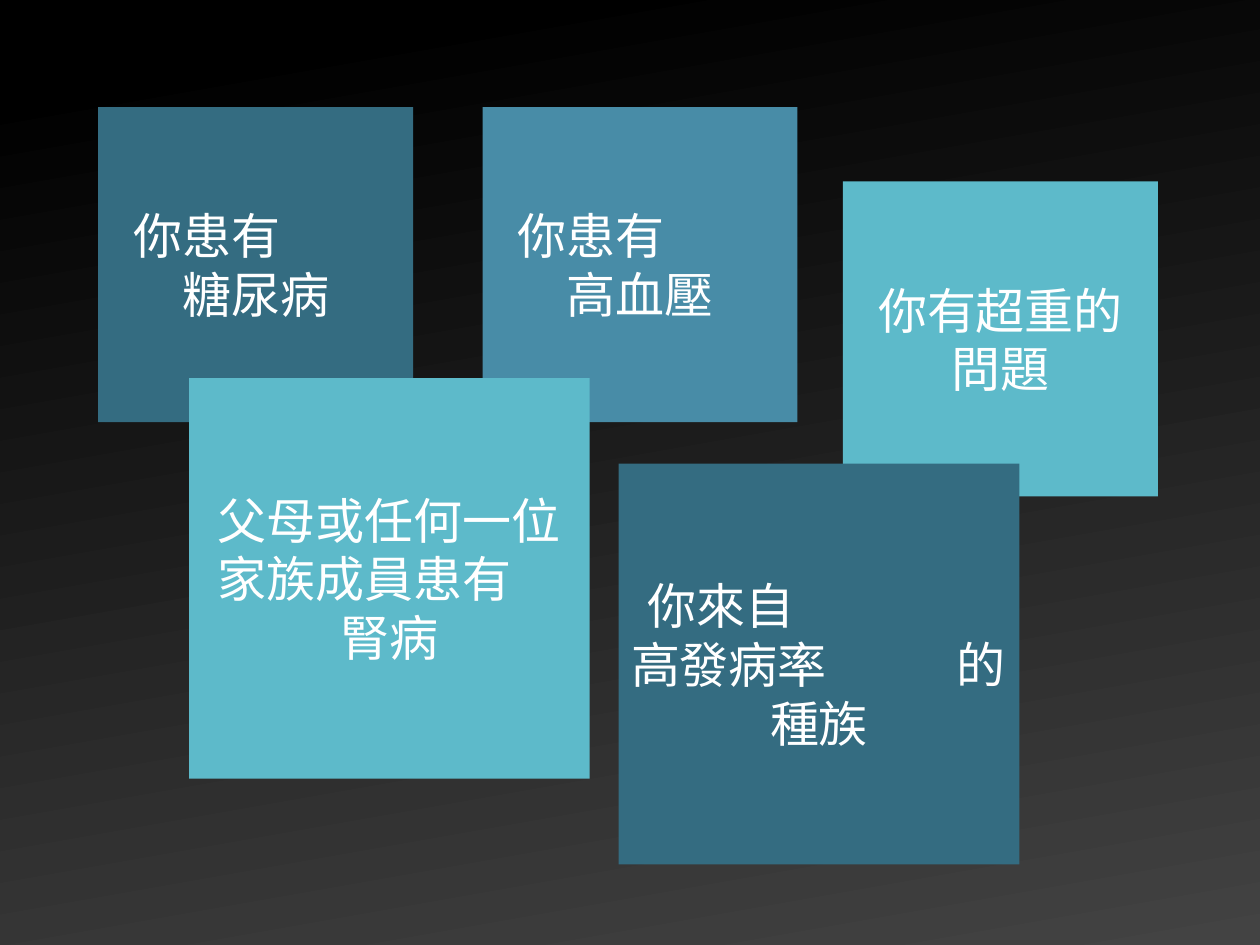
import lxml.etree
import pptx
import pptx.dml.color
import pptx.enum.shapes
import pptx.enum.text
import pptx.oxml.ns
import pptx.util

Inches = pptx.util.Inches
ALIGN = pptx.enum.text.PP_ALIGN

COLORS = {
    "top": "000000",
    "bottom": "434343",
    "dark": "346C81",
    "mid": "488CA7",
    "light": "5DBACA",
    "text": "FFFFFF",
}
SMALL, LARGE = 2.5, 3.18
CENTER = None


class RiskSlide:
    font_name = "Arial"
    font_size = pptx.util.Pt(28)

    def __init__(self, prs):
        self.slide = prs.slides.add_slide(prs.slide_layouts[6])

    def color(self, name):
        return pptx.dml.color.RGBColor.from_string(COLORS[name])

    def background(self):
        fill = self.slide.background.fill
        fill.gradient()
        fill.gradient_angle = 280
        for stop, position, name in zip(fill.gradient_stops, (0.08, 1), ("top", "bottom")):
            stop.position = position
            stop.color.rgb = self.color(name)

    def indent(self, p, inches):
        p.alignment = ALIGN.LEFT
        p._p.get_or_add_pPr().set("marL", str(Inches(inches)))

    def tab_stop(self, p, inches):
        qn = pptx.oxml.ns.qn
        tabs = lxml.etree.SubElement(p._p.get_or_add_pPr(), qn("a:tabLst"))
        lxml.etree.SubElement(tabs, qn("a:tab"), pos=str(Inches(inches)), algn="l")

    def card(self, left, top, size, fill, lines):
        """Draw a square; each line is (text, left indent or CENTER)."""
        sp = self.slide.shapes.add_shape(
            pptx.enum.shapes.MSO_SHAPE.RECTANGLE,
            Inches(left), Inches(top), Inches(size), Inches(size))
        sp.shadow.inherit = False
        sp.fill.solid()
        sp.fill.fore_color.rgb = self.color(fill)
        sp.line.fill.background()
        tf = sp.text_frame
        tf.word_wrap = True
        tf.vertical_anchor = pptx.enum.text.MSO_ANCHOR.MIDDLE
        tf.text = "\n".join(text for text, _ in lines)
        for p, (text, indent) in zip(tf.paragraphs, lines):
            if indent is CENTER:
                p.alignment = ALIGN.CENTER
            else:
                self.indent(p, indent)
            if "\t" in text:
                self.tab_stop(p, 2.58)
            for r in p.runs:
                r.font.name = self.font_name
                r.font.size = self.font_size
                r.font.color.rgb = self.color("text")


def main():
    prs = pptx.Presentation()
    prs.slide_width, prs.slide_height = Inches(10), Inches(7.5)
    s = RiskSlide(prs)
    s.background()
    for left, fill, disease in ((0.78, "dark", "糖尿病"), (3.83, "mid", "高血壓")):
        s.card(left, 0.85, SMALL, fill, [("你患有", 0.18), (disease, 0.57)])
    s.card(6.69, 1.44, SMALL, "light", [("你有超重的問題", CENTER)])
    s.card(1.5, 3, LARGE, "light",
           [("父母或任何一位家族成員患有", 0.13), ("腎病", CENTER)])
    s.card(4.91, 3.68, LARGE, "dark",
           [("你來自", 0.13), ("高發病率\t的", 0), ("種族", CENTER)])
    prs.save("out.pptx")


if __name__ == "__main__":
    main()
